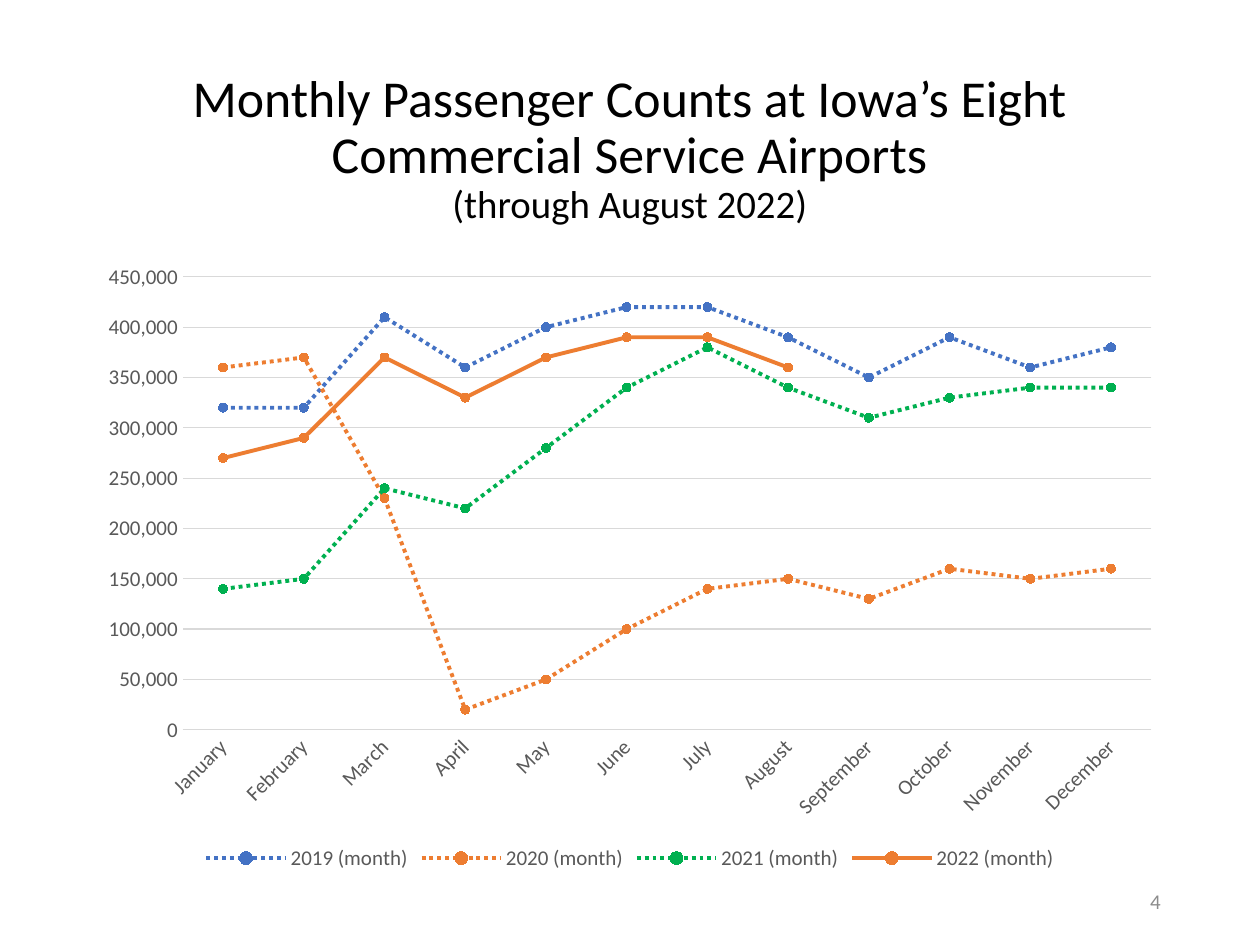
from pptx import Presentation
from pptx.chart.data import CategoryChartData
from pptx.dml.color import RGBColor
from pptx.enum.chart import XL_CHART_TYPE as CT, XL_LEGEND_POSITION as LP
from pptx.enum.chart import XL_MARKER_STYLE as MS, XL_TICK_MARK as TM
from pptx.enum.dml import MSO_LINE
from pptx.enum.text import MSO_ANCHOR as ANCHOR, MSO_AUTO_SIZE, PP_ALIGN as ALIGN
from pptx.util import Inches, Pt

FONT = "Calibri"
BLACK = RGBColor(0x00, 0x00, 0x00)
GRAY = RGBColor(0x59, 0x59, 0x59)
NUMBER_GRAY = RGBColor(0x8C, 0x8C, 0x8C)
GRID = RGBColor(0xD9, 0xD9, 0xD9)
BLUE = RGBColor(0x44, 0x72, 0xC4)
ORANGE = RGBColor(0xED, 0x7D, 0x31)
GREEN = RGBColor(0x00, 0xB0, 0x50)

MONTHS = ["January", "February", "March", "April", "May", "June", "July",
          "August", "September", "October", "November", "December"]
THOUSANDS = {
    2019: [320, 320, 410, 360, 400, 420, 420, 390, 350, 390, 360, 380],
    2020: [360, 370, 230, 20, 50, 100, 140, 150, 130, 160, 150, 160],
    2021: [140, 150, 240, 220, 280, 340, 380, 340, 310, 330, 340, 340],
    2022: [270, 290, 370, 330, 370, 390, 390, 360] + [None] * 4,
}
STYLES = [(BLUE, MSO_LINE.ROUND_DOT), (ORANGE, MSO_LINE.ROUND_DOT),
          (GREEN, MSO_LINE.ROUND_DOT), (ORANGE, MSO_LINE.SOLID)]


def set_font(font, size, color):
    """Apply the slide typeface with a size and colour."""
    font.name, font.size = FONT, Pt(size)
    font.color.rgb = color


def write(p, text, size=12, color=BLACK, align=ALIGN.LEFT, spacing=1.0):
    """Write one formatted run into a paragraph."""
    p.alignment, p.line_spacing = align, spacing
    p.space_before = Pt(0)
    r = p.add_run()
    r.text = text
    set_font(r.font, size, color)


def add_title(s, x, y, w, h):
    """Place the title and its smaller second line."""
    sp = s.shapes.title
    sp.left, sp.top, sp.width, sp.height = map(Inches, (x, y, w, h))
    tf = sp.text_frame
    tf.word_wrap, tf.auto_size = True, MSO_AUTO_SIZE.NONE
    tf.vertical_anchor = ANCHOR.BOTTOM
    write(tf.paragraphs[0],
          "Monthly Passenger Counts at Iowa’s Eight Commercial Service Airports",
          size=29.6, align=ALIGN.CENTER, spacing=0.9)
    write(tf.add_paragraph(), "(through August 2022)",
          size=22.2, align=ALIGN.CENTER, spacing=0.9)


def style_axes(chart):
    """Format the month axis, the passenger axis and the gridlines."""
    months, counts = chart.category_axis, chart.value_axis
    for axis in (months, counts):
        axis.major_tick_mark = axis.minor_tick_mark = TM.NONE
        set_font(axis.tick_labels.font, 12, GRAY)
    counts.has_major_gridlines = True
    for line in (months.format.line, counts.major_gridlines.format.line):
        line.color.rgb, line.width = GRID, Pt(0.75)
    months._element.txPr.bodyPr.set("rot", "-2700000")
    counts.format.line.fill.background()
    counts.minimum_scale, counts.maximum_scale = 0, 450000
    counts.major_unit = 50000
    counts.tick_labels.number_format = "#,##0"
    counts.tick_labels.number_format_is_linked = False


def style_series(ser, color, dash):
    """Format one year's line and its round markers."""
    ser.smooth = False
    line = ser.format.line
    line.color.rgb, line.width, line.dash_style = color, Pt(2.25), dash
    marker = ser.marker
    marker.style, marker.size = MS.CIRCLE, 5
    marker.format.fill.solid()
    marker.format.fill.fore_color.rgb = color
    marker.format.line.color.rgb = color


def add_passenger_chart(s, x, y, w, h):
    """Place the line chart of monthly passengers by year."""
    data = CategoryChartData(number_format="#,##0")
    data.categories = MONTHS
    for year, values in THOUSANDS.items():
        data.add_series(f"{year} (month)",
                        [None if v is None else v * 1000 for v in values])
    chart = s.shapes.add_chart(CT.LINE_MARKERS, *map(Inches, (x, y, w, h)), data).chart
    chart.has_title = False
    set_font(chart.font, 10, BLACK)
    chart.has_legend = True
    chart.legend.position = LP.BOTTOM
    chart.legend.include_in_layout = False
    set_font(chart.legend.font, 12, GRAY)
    style_axes(chart)
    plot = chart.plots[0]
    plot.vary_by_categories = False
    for ser, (color, dash) in zip(plot.series, STYLES):
        style_series(ser, color, dash)


def add_page_number(s, x, y, w, h):
    """Place the page number at the lower right."""
    tf = s.shapes.add_textbox(*map(Inches, (x, y, w, h))).text_frame
    tf.word_wrap, tf.vertical_anchor = True, ANCHOR.MIDDLE
    write(tf.paragraphs[0], "4", color=NUMBER_GRAY, align=ALIGN.RIGHT)


def main():
    """Build and save the slide."""
    prs = Presentation()
    prs.slide_width, prs.slide_height = Inches(10), Inches(7.5)
    s = prs.slides.add_slide(prs.slide_layouts[5])
    add_title(s, 0.69, 0.4, 8.62, 1.45)
    add_passenger_chart(s, 0.69, 2, 8.62, 4.95)
    add_page_number(s, 7.06, 6.95, 2.25, 0.4)
    prs.save("out.pptx")


if __name__ == "__main__":
    main()
